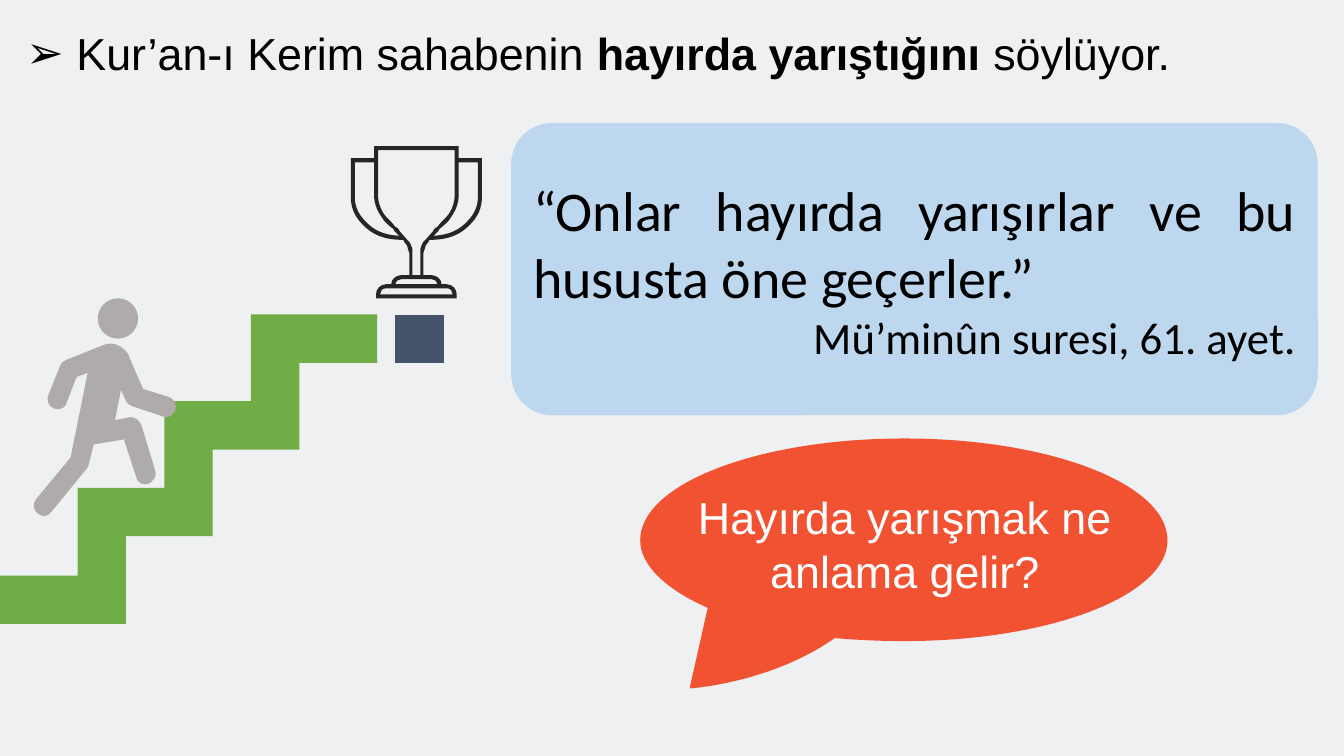
from itertools import pairwise

from lxml import etree
from pptx import Presentation
from pptx.dml.color import RGBColor
from pptx.enum.shapes import MSO_SHAPE as SHAPE
from pptx.enum.text import MSO_ANCHOR as ANCHOR, MSO_AUTO_SIZE as AUTO, PP_ALIGN as ALIGN
from pptx.oxml.ns import qn
from pptx.util import Pt

PX = 9144
SLIDE_W, SLIDE_H = 1333, 750

TITLE = [("Kur’an-ı Kerim sahabenin ", False), ("hayırda yarıştığını ", True), ("söylüyor.", False)]
VERSE = "“Onlar hayırda yarışırlar ve bu hususta öne geçerler.” "
VERSE_SOURCE = "Mü’minûn suresi, 61. ayet."
QUESTION = "Hayırda yarışmak ne anlama gelir?"

STEP_X = [0, 77, 163, 249, 374]
STEP_Y = [571, 484, 398, 312]
STEP_DEPTH = 48
LANDING = [(392, 312), (440, 312), (440, 360), (392, 360)]

CLIMBER_BODY = [
    (109, 341), (117, 341, 123, 345, 127, 351), (127, 352, 142, 386, 142, 386),
    (168, 394), (173, 396, 176, 402, 174, 407), (172, 411, 169, 414, 164, 414),
    (163, 414, 162, 413, 161, 413), (131, 403), (128, 402, 126, 400, 125, 398),
    (120, 387), (114, 417), (129, 414), (133, 413, 138, 417, 140, 421),
    (154, 467), (155, 471, 154, 475, 151, 477), (150, 479, 149, 479, 147, 480),
    (142, 482, 136, 479, 135, 473), (123, 436), (93, 441), (88, 461),
    (88, 462, 87, 464, 86, 465), (51, 508), (49, 510, 47, 512, 44, 512),
    (41, 512, 39, 511, 37, 509), (33, 506, 32, 500, 36, 495), (70, 454),
    (87, 370), (76, 374), (66, 400), (65, 404, 61, 406, 57, 406),
    (56, 406, 54, 406, 53, 405), (48, 403, 46, 397, 48, 392), (60, 362),
    (61, 360, 63, 358, 66, 357), (101, 343), (103, 342, 106, 341, 109, 341),
]
CLIMBER_HEAD = [
    (117, 296), (128, 296, 137, 305, 137, 316), (137, 327, 128, 336, 117, 336),
    (106, 336, 97, 327, 97, 316), (97, 305, 106, 296, 117, 296),
]

TROPHY_AXIS = 413
TROPHY_HALVES = [
    [(413, 145), (371, 145), (371, 157), (348, 157), (348, 196),
     (348, 206, 352, 215, 359, 222), (369, 233, 381, 238, 400, 238), (401, 240),
     (403, 242, 405, 245, 405, 248), (406, 249, 406, 250, 406, 251), (406, 273),
     (398, 273), (393, 273, 388, 277, 388, 282), (383, 282),
     (377, 282, 373, 287, 373, 292), (373, 296), (413, 296)],
    [(413, 149), (375, 149), (375, 194), (375, 200, 377, 206, 380, 211),
     (381, 213, 383, 215, 384, 216), (387, 219, 390, 222, 392, 225), (394, 226),
     (395, 227, 396, 228, 397, 230), (404, 238), (407, 240, 408, 244, 409, 247),
     (409, 249, 409, 250, 409, 251), (409, 273), (413, 273)],
    [(413, 286), (383, 286), (379, 286, 377, 289, 377, 292), (413, 292)],
    [(413, 277), (398, 277), (395, 277, 392, 279, 392, 282), (413, 282)],
]
TROPHY_HANDLE = [
    (362, 219), (356, 213, 352, 205, 352, 196), (352, 161), (371, 161), (371, 194),
    (371, 200, 373, 207, 377, 213), (378, 215, 380, 217, 381, 219),
    (384, 222, 387, 225, 390, 227), (391, 229), (392, 230, 393, 231, 394, 232),
    (396, 234), (381, 233, 371, 229, 362, 219),
]

BUBBLE = [
    (897, 435), (752, 435, 635, 480, 635, 536), (635, 561, 661, 585, 702, 603),
    (684, 683), (684, 683, 764, 678, 828, 633), (850, 635, 873, 636, 897, 636),
    (1041, 636, 1158, 591, 1158, 536), (1158, 480, 1041, 435, 897, 435),
]


def rgb(color):
    return RGBColor.from_string(color)


def box(*lengths):
    return [v * PX for v in lengths]


def mirror(contour):
    flipped = [[2 * TROPHY_AXIS - v if i % 2 == 0 else v for i, v in enumerate(seg)]
               for seg in contour]
    result = [flipped[-1][-2:]]
    for prev, seg in reversed(list(pairwise(flipped))):
        result.append(seg[2:4] + seg[:2] + prev[-2:] if len(seg) == 6 else prev[-2:])
    return result


def paint(sp, color):
    sp.shadow.inherit = False
    sp.fill.solid()
    sp.fill.fore_color.rgb = rgb(color)
    sp.line.fill.background()


def add_outline(shapes, contours, color):
    ends = [[box(*seg[-2:]) for seg in contour] for contour in contours]
    builder = shapes.build_freeform(*ends[0][0], scale=1.0)
    for i, points in enumerate(ends):
        if i:
            builder.move_to(*points[0])
        builder.add_line_segments(points[1:], close=True)
    sp = builder.convert_to_shape()
    paint(sp, color)
    lines = list(sp._element.iter(qn("a:lnTo")))
    segments = [seg for contour in contours for seg in contour[1:]]
    for line, seg in zip(lines, segments):
        if len(seg) == 2:
            continue
        curve = etree.Element(qn("a:cubicBezTo"))
        for x, y in zip(seg[::2], seg[1::2]):
            pt = etree.SubElement(curve, qn("a:pt"))
            pt.set("x", str(x * PX - sp.left))
            pt.set("y", str(y * PX - sp.top))
        line.getparent().replace(line, curve)


def style(p, font, size, color, align):
    p.alignment = align
    for r in p.runs:
        r.font.name, r.font.size = font, Pt(size)
        r.font.color.rgb = rgb(color)


def add_text(shapes, place):
    tf = shapes.add_textbox(*box(*place)).text_frame
    tf.word_wrap = True
    tf.auto_size = AUTO.SHAPE_TO_FIT_TEXT
    return tf.paragraphs[0]


def add_bullet(p, char, indent):
    pPr = p._p.get_or_add_pPr()
    pPr.set("marL", str(indent * PX))
    pPr.set("indent", str(-indent * PX))
    etree.SubElement(pPr, qn("a:buFont")).set("typeface", "Arial")
    etree.SubElement(pPr, qn("a:buChar")).set("char", char)


def main():
    prs = Presentation()
    prs.slide_width, prs.slide_height = box(SLIDE_W, SLIDE_H)
    s = prs.slides.add_slide(prs.slide_layouts[6])
    shapes = s.shapes
    paint(shapes.add_shape(SHAPE.RECTANGLE, *box(0, 0, SLIDE_W, SLIDE_H)), "EEF0F2")

    treads = [(x, y) for i, y in enumerate(STEP_Y) for x in STEP_X[i:i + 2]]
    underside = [(x + STEP_DEPTH, y + STEP_DEPTH) for x, y in treads[1:-1]]
    left, right = [(x, y + STEP_DEPTH) for x, y in (treads[0], treads[-1])]
    add_outline(shapes, [treads + [right] + underside[::-1] + [left]], "70AD47")
    add_outline(shapes, [LANDING], "44546A")

    add_outline(shapes, [CLIMBER_BODY, CLIMBER_HEAD], "AFABAB")

    trophy = [half + mirror(half)[1:-1] for half in TROPHY_HALVES]
    add_outline(shapes, trophy + [TROPHY_HANDLE, mirror(TROPHY_HANDLE)], "262626")

    sp = shapes.add_shape(SHAPE.ROUNDED_RECTANGLE, *box(507, 122, 800, 290))
    sp.adjustments[0] = 0.14
    paint(sp, "BDD7EE")
    tf = sp.text_frame
    tf.word_wrap = True
    tf.vertical_anchor = ANCHOR.MIDDLE
    tf.text = VERSE
    tf.add_paragraph().text = VERSE_SOURCE
    style(tf.paragraphs[0], "Calibri", 40, "000000", ALIGN.JUSTIFY)
    style(tf.paragraphs[1], "Calibri", 32, "000000", ALIGN.RIGHT)

    p = add_text(shapes, (16, 21, 1163, 64))
    for text, bold in TITLE:
        r = p.add_run()
        r.text = text
        r.font.bold = bold
    style(p, "Arial", 32, "000000", ALIGN.LEFT)
    add_bullet(p, "➢", 50)

    add_outline(shapes, [BUBBLE], "F15232")
    p = add_text(shapes, (660, 481, 475, 118))
    p.text = QUESTION
    style(p, "Arial", 32, "FFFFFF", ALIGN.CENTER)

    prs.save("out.pptx")


if __name__ == "__main__":
    main()
